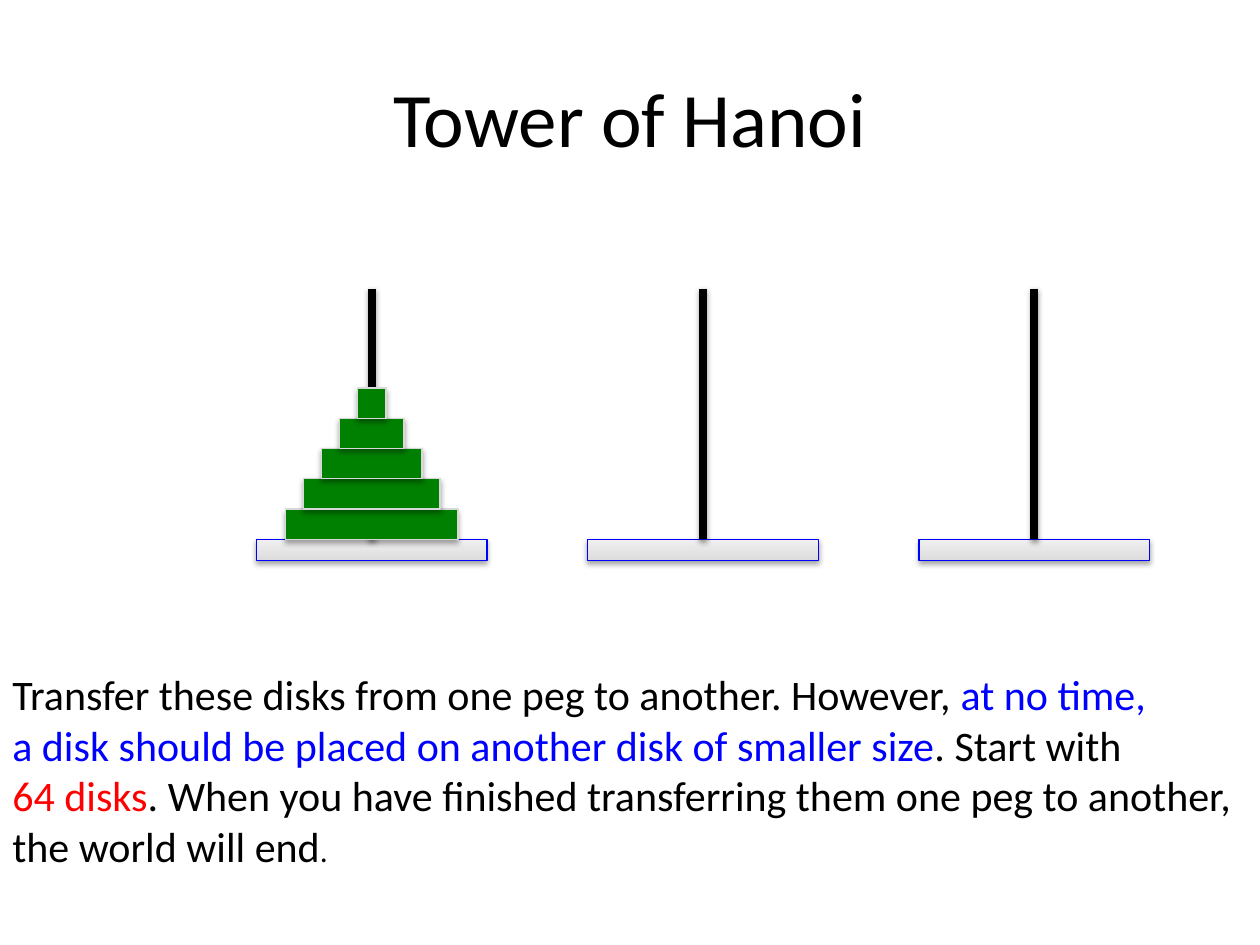
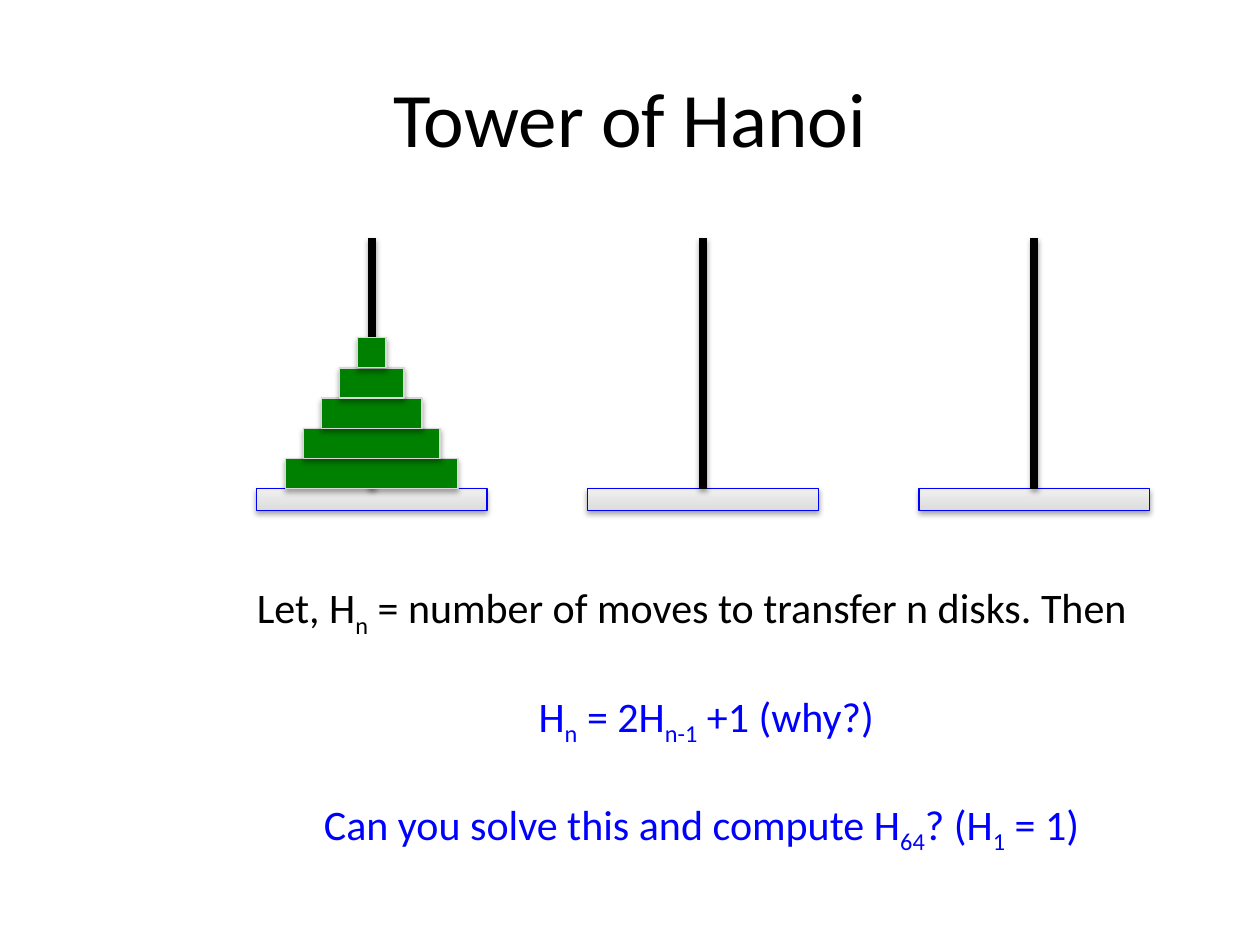
from lxml.etree import SubElement
from pptx import Presentation
from pptx.dml.color import RGBColor
from pptx.enum.shapes import MSO_CONNECTOR, MSO_SHAPE
from pptx.enum.text import MSO_ANCHOR, PP_ALIGN
from pptx.oxml.ns import qn
from pptx.util import Inches, Pt

COLORS = {
    "text": "000000",
    "blue": "0000FF",
    "red": "FF0000",
    "disk": "008000",
    "disk_edge": "D8D8D8",
    "base_dark": "DDDDDD",
    "base_light": "EFEFEF",
}
FONT = "Calibri"
SLIDE_W, SLIDE_H = 10, 7.5
TITLE_ONLY = 5

PEG_COUNT, FIRST_PEG, PEG_PITCH, PEG_HEIGHT = 3, 2.95, 2.63, 1.99
BASE_W, BASE_H = 1.83, 0.17
DISK_COUNT, WIDEST, NARROWEST, DISK_H = 5, 1.37, 0.23, 0.24

RULES = [
    [("Transfer these disks from one peg to another. However, ", "text"), ("at no time,", "blue")],
    [("a disk should be placed on another disk of smaller size", "blue"), (". Start with", "text")],
    [("64 disks", "red"),
     (". When you have finished transferring them one peg to another,", "text")],
    [("the world will end", "text"), (".", "text")],
]
DEFINITION = [("Let, H", "n"), (" = number of moves to transfer n disks. Then", "")]
RECURRENCE = [("H", "n"), (" = 2H", "n-1"), (" +1 (why?)", "")]
QUESTION = [("Can you solve this and compute H", "64"), ("? (H", "1"), (" = 1) ", "")]


def rgb(name):
    """Return the named palette colour."""
    return RGBColor.from_string(COLORS[name])


def set_font(font, size, color="text"):
    """Apply the shared typeface with a size and colour."""
    font.name, font.size = FONT, Pt(size)
    font.color.rgb = rgb(color)


def add_shadow(element, opacity, distance):
    """Give a shape or connector a soft shadow falling straight down."""
    effects = SubElement(element.spPr, qn("a:effectLst"))
    shadow = SubElement(effects, qn("a:outerShdw"), blurRad=str(Pt(3.1)),
                        dist=str(Pt(distance)), dir="5400000", rotWithShape="0")
    black = SubElement(shadow, qn("a:srgbClr"), val=COLORS["text"])
    SubElement(black, qn("a:alpha"), val=str(opacity * 1000))


def add_block(slide, center, top, width, height, edge):
    """Add a shadowed rectangle centred on a peg and return it."""
    block = slide.shapes.add_shape(MSO_SHAPE.RECTANGLE, Inches(center - width / 2),
                                   Inches(top), Inches(width), Inches(height))
    block.line.color.rgb = rgb(edge)
    block.line.width = Pt(0.75)
    add_shadow(block._element, 35, 1.8)
    return block


def add_base(slide, center, top):
    """Add the shaded base of one peg and return it."""
    base = add_block(slide, center, top, BASE_W, BASE_H, "blue")
    base.fill.gradient()
    base.fill.gradient_angle = 90
    for stop, shade in zip(base.fill.gradient_stops, ("base_dark", "base_light")):
        stop.color.rgb = rgb(shade)
    return base


def add_peg(slide, center, floor, base):
    """Add a peg that stands on the middle of its base."""
    peg = slide.shapes.add_connector(MSO_CONNECTOR.STRAIGHT, Inches(center),
                                     Inches(floor - PEG_HEIGHT), Inches(center), Inches(floor))
    peg.end_connect(base, 0)
    peg.begin_x = peg.end_x
    peg.line.color.rgb = rgb("text")
    peg.line.width = Pt(4.5)
    add_shadow(peg._element, 38, 1.6)


def add_towers(slide, floor):
    """Draw the three pegs and stack the disks on the first one."""
    centers = [FIRST_PEG + PEG_PITCH * i for i in range(PEG_COUNT)]
    bases = [add_base(slide, center, floor) for center in centers]
    for center, base in zip(centers, bases):
        add_peg(slide, center, floor, base)
    shrink = (WIDEST - NARROWEST) / (DISK_COUNT - 1)
    for level in range(DISK_COUNT):
        disk = add_block(slide, FIRST_PEG, floor - DISK_H * (level + 1),
                         WIDEST - shrink * level, DISK_H, "disk_edge")
        disk.fill.solid()
        disk.fill.fore_color.rgb = rgb("disk")


def add_hanoi_slide(prs, floor):
    """Add a titled slide with the towers standing at the given height."""
    slide = prs.slides.add_slide(prs.slide_layouts[TITLE_ONLY])
    title = slide.shapes.title
    title.left, title.top = Inches(SLIDE_W * 0.05), Inches(SLIDE_H * 0.04)
    title.width, title.height = Inches(SLIDE_W * 0.9), Inches(1.25)
    title.text_frame.text = "Tower of Hanoi"
    title.text_frame.vertical_anchor = MSO_ANCHOR.MIDDLE
    heading = title.text_frame.paragraphs[0]
    heading.alignment = PP_ALIGN.CENTER
    set_font(heading.font, 44)
    add_towers(slide, floor)
    return slide


def add_text_frame(slide, left, top, width, height, wrap):
    """Add a text box and return its text frame."""
    frame = slide.shapes.add_textbox(Inches(left), Inches(top),
                                     Inches(width), Inches(height)).text_frame
    frame.word_wrap = wrap
    return frame


def next_paragraph(frame, index, color="text"):
    """Return the paragraph at the next index, set in body type."""
    paragraph = frame.add_paragraph() if index else frame.paragraphs[0]
    set_font(paragraph.font, 24, color)
    return paragraph


def add_rules(slide):
    """Write the rules of the puzzle with coloured key phrases."""
    frame = add_text_frame(slide, 0, 5.26, 9.97, 1.72, False)
    for index, phrases in enumerate(RULES):
        paragraph = next_paragraph(frame, index)
        for text, color in phrases:
            phrase = paragraph.add_run()
            phrase.text = text
            phrase.font.color.rgb = rgb(color)
    phrase.font.size = Pt(18)


def add_formula(paragraph, terms):
    """Write terms, each followed by its subscript if it has one."""
    for text, subscript in terms:
        paragraph.add_run().text = text
        if subscript:
            index_run = paragraph.add_run()
            index_run.text = subscript
            index_run._r.get_or_add_rPr().set("baseline", "-25000")


def add_recurrence(slide):
    """Write the definition, the recurrence and the closing question."""
    frame = add_text_frame(slide, 1.94, 4.57, 7.33, 2.93, True)
    add_formula(next_paragraph(frame, 0), DEFINITION)
    for index, terms in enumerate((RECURRENCE, QUESTION), start=1):
        paragraph = next_paragraph(frame, index, "blue")
        paragraph.alignment = PP_ALIGN.CENTER
        paragraph.space_before = Pt(29)
        add_formula(paragraph, terms)


def main():
    """Build both slides and save the presentation."""
    prs = Presentation()
    prs.slide_width, prs.slide_height = Inches(SLIDE_W), Inches(SLIDE_H)
    add_rules(add_hanoi_slide(prs, 4.28))
    add_recurrence(add_hanoi_slide(prs, 3.88))
    prs.save("out.pptx")


if __name__ == "__main__":
    main()
